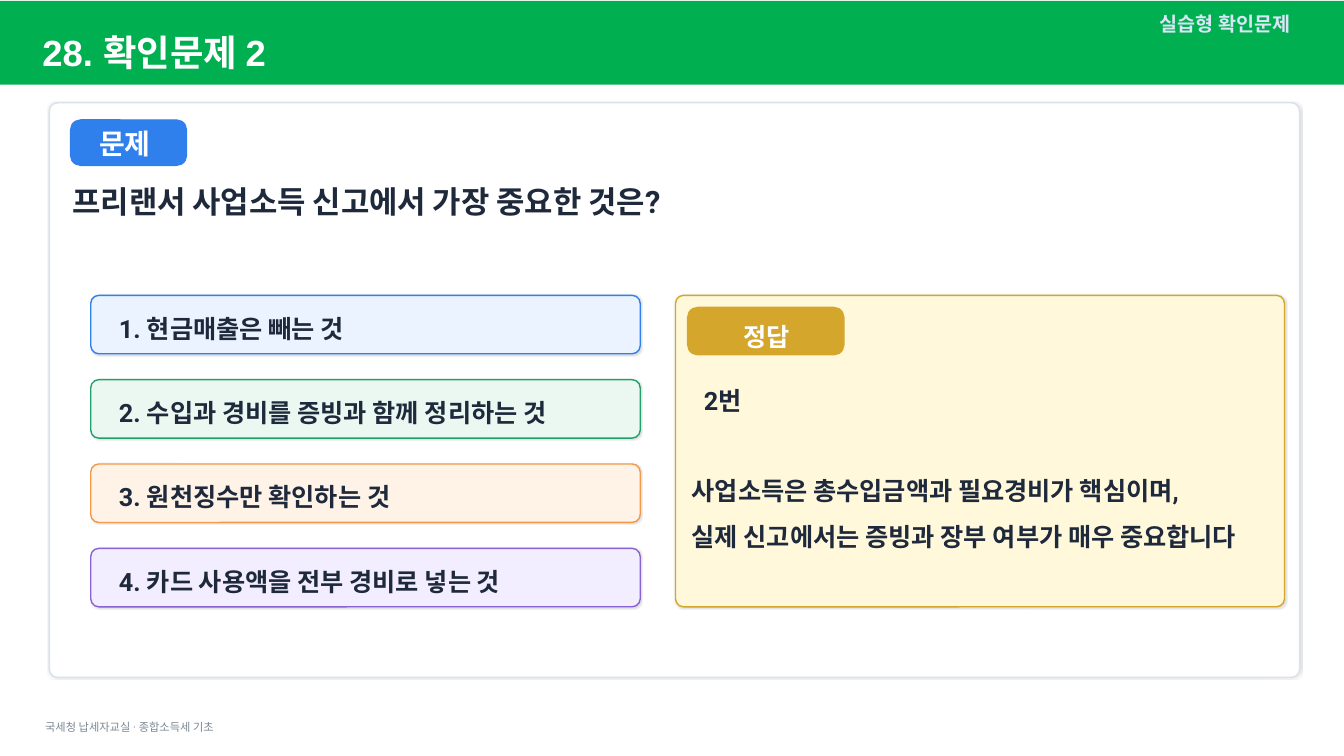
from dataclasses import dataclass

from lxml.etree import SubElement
from pptx import Presentation
from pptx.dml.color import RGBColor
from pptx.enum.shapes import MSO_SHAPE as Shape
from pptx.enum.text import MSO_ANCHOR as Anchor, MSO_AUTO_SIZE as AutoSize, PP_ALIGN as Align
from pptx.oxml.ns import qn
from pptx.util import Inches, Pt


@dataclass(frozen=True)
class Theme:
    heading_font: str = "Arial"
    body_font: str = "Roboto"
    title_size: int = 26
    question_size: int = 22
    tag_size: int = 20
    body_size: int = 18
    section_size: int = 14
    footer_size: int = 8
    white: str = "FFFFFF"
    ink: str = "1E293B"
    band: str = "00B050"
    section: str = "D8E6F7"
    footer: str = "7B8794"
    card_line: str = "D9E2EC"
    blue: str = "2F80ED"
    gold: str = "D4A72C"
    answer_fill: str = "FFF8DB"
    shadow: str = "000000"
    choice_colors: tuple = (
        ("EAF3FF", "2F80ED"),
        ("EAF8F1", "22A06B"),
        ("FFF3E8", "F2994A"),
        ("F3EEFF", "8A63D2"),
    )


class QuizPage:
    def __init__(self, deck, theme):
        self.theme = theme
        self.page = deck.slides.add_slide(deck.slide_layouts[5])

    def fill_text(self, box, lines, size, color, font=None, bold=True,
                  align=Align.LEFT, spacing=None, margins=(0.1, 0.05)):
        frame = box.text_frame
        frame.text = "\n".join(lines)
        frame.word_wrap = True
        frame.auto_size = AutoSize.NONE
        frame.vertical_anchor = Anchor.MIDDLE
        frame.margin_left = frame.margin_right = Inches(margins[0])
        frame.margin_top = frame.margin_bottom = Inches(margins[1])
        for para in frame.paragraphs:
            para.alignment = align
            if spacing:
                para.line_spacing = spacing
            para.font.name = font or self.theme.body_font
            para.font.size = Pt(size)
            para.font.bold = bold
            para.font.color.rgb = RGBColor.from_string(color)
        return frame

    def text(self, area, lines, size, color, **style):
        box = self.page.shapes.add_textbox(*map(Inches, area))
        return self.fill_text(box, lines, size, color, **style)

    def title(self, area, words):
        box = self.page.shapes.title
        box.left, box.top, box.width, box.height = map(Inches, area)
        self.fill_text(box, [words], self.theme.title_size, self.theme.white,
                       font=self.theme.heading_font)

    def band(self, area):
        """Draw the header band behind the title."""
        shape = self.page.shapes.add_shape(Shape.RECTANGLE, *map(Inches, area))
        shape.shadow.inherit = False
        shape.fill.solid()
        shape.fill.fore_color.rgb = RGBColor.from_string(self.theme.band)
        shape.line.fill.background()
        self.page.shapes.title._element.addprevious(shape._element)

    def panel(self, area, fill, line, radius=0.08, shadow=True):
        """Draw a rounded box; radius is in inches."""
        shape = self.page.shapes.add_shape(Shape.ROUNDED_RECTANGLE, *map(Inches, area))
        shape.adjustments[0] = radius / min(area[2:])
        shape.fill.solid()
        shape.fill.fore_color.rgb = RGBColor.from_string(fill)
        shape.line.color.rgb = RGBColor.from_string(line)
        shape.line.width = Pt(1)
        shape.shadow.inherit = False
        if shadow:
            effects = shape._element.spPr.find(qn("a:effectLst"))
            outer = SubElement(effects, qn("a:outerShdw"), blurRad=str(Pt(1)),
                               dist=str(Pt(0.5)), dir="2700000", rotWithShape="0")
            tint = SubElement(outer, qn("a:srgbClr"), val=self.theme.shadow)
            SubElement(tint, qn("a:alpha"), val="12000")

    def tag(self, area, label_area, label, color, size, spacing=None):
        self.panel(area, color, color, radius=0.1, shadow=False)
        self.text(label_area, [label], size, self.theme.white,
                  align=Align.CENTER, spacing=spacing)

    def choices(self, options):
        for index, (option, colors) in enumerate(zip(options, self.theme.choice_colors)):
            top = 2.93 + index * 2.51 / 3
            self.panel((0.9, top, 5.45, 0.58), *colors)
            self.text((1.08, top + 0.16, 5.05, 0.18), [f"{index + 1}. {option}"],
                      self.theme.body_size, self.theme.ink, spacing=1.5)

    def answer(self, area, lines):
        """Set the indented answer, then its explanation after a gap."""
        frame = self.text(area, lines, self.theme.body_size, self.theme.ink,
                          spacing=1.5, margins=(0, 0))
        choice, reason = frame.paragraphs[:2]
        choice._p.get_or_add_pPr().set("marL", str(Inches(0.12)))
        reason.space_before = Pt(32)


def main():
    theme = Theme()
    deck = Presentation()
    deck.slide_width, deck.slide_height = Inches(13.33), Inches(7.5)
    quiz = QuizPage(deck, theme)

    quiz.band((0, 0.01, 13.33, 0.83))
    quiz.title((0.32, 0.4, 7.3, 0.23), "28. 확인문제 2")
    quiz.text((8.7, 0.14, 4.2, 0.18), ["실습형 확인문제"], theme.section_size,
              theme.section, font=theme.heading_font, align=Align.RIGHT)
    quiz.text((0.35, 7.12, 4, 0.18), ["국세청 납세자교실 · 종합소득세 기초"],
              theme.footer_size, theme.footer, bold=False)

    quiz.panel((0.49, 1.02, 12.4, 5.7), theme.white, theme.card_line)
    quiz.tag((0.7, 1.19, 1.15, 0.45), (0.78, 1.35, 0.92, 0.15), "문제",
             theme.blue, theme.tag_size)
    quiz.text((0.72, 1.7, 11.7, 0.6), ["프리랜서 사업소득 신고에서 가장 중요한 것은?"],
              theme.question_size, theme.ink, margins=(0, 0))
    quiz.choices((
        "현금매출은 빼는 것",
        "수입과 경비를 증빙과 함께 정리하는 것",
        "원천징수만 확인하는 것",
        "카드 사용액을 전부 경비로 넣는 것",
    ))

    quiz.panel((6.7, 2.93, 6.04, 3.09), theme.answer_fill, theme.gold)
    quiz.tag((6.82, 3.05, 1.55, 0.47), (6.87, 3.19, 1.47, 0.15), "정답",
             theme.gold, theme.body_size, spacing=1.5)
    quiz.answer((6.86, 3.41, 5.88, 2.32), (
        "2번",
        "사업소득은 총수입금액과 필요경비가 핵심이며,",
        "실제 신고에서는 증빙과 장부 여부가 매우 중요합니다",
    ))
    deck.save("out.pptx")


if __name__ == "__main__":
    main()
